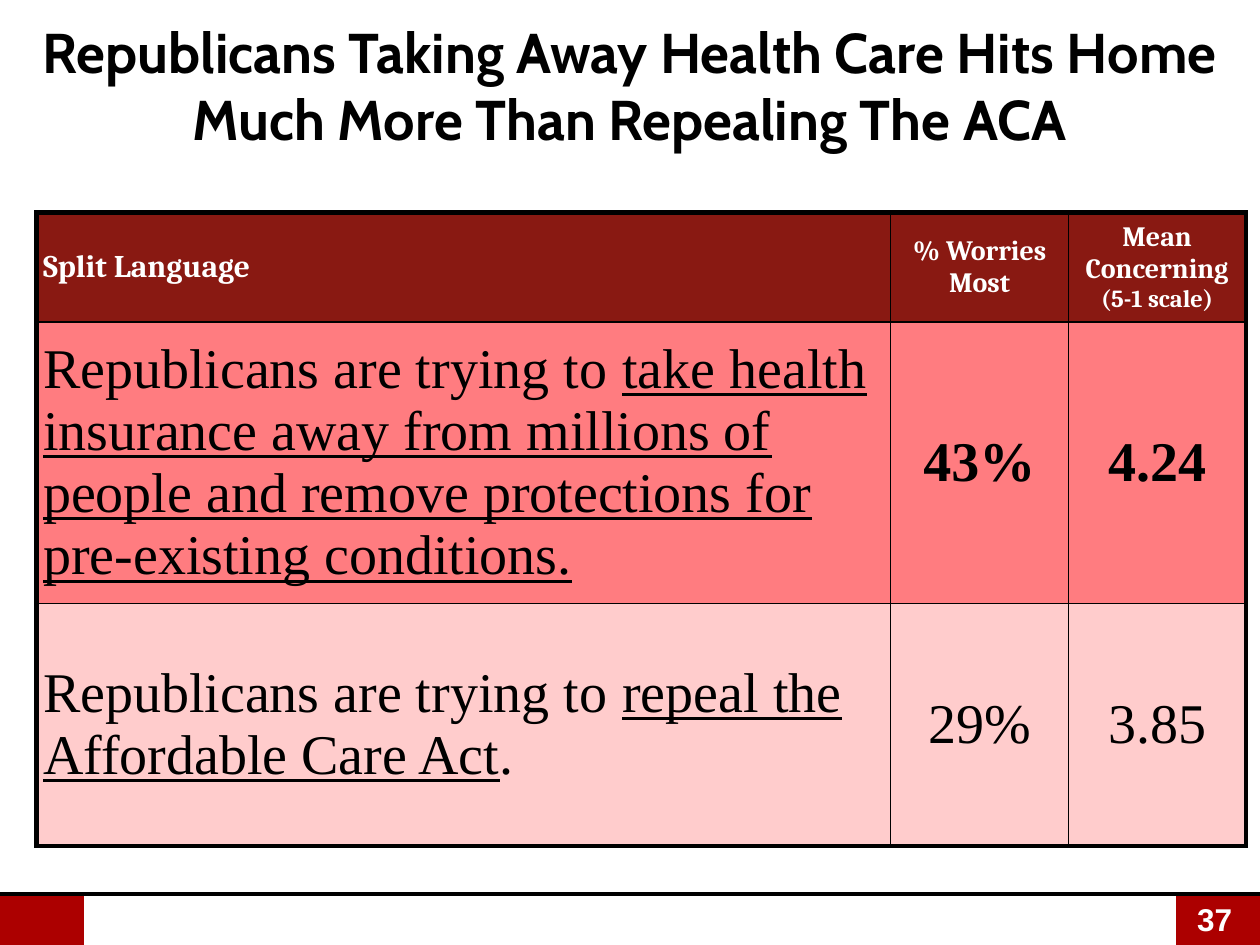
"""Build a slide comparing two ways of wording a health care message."""
from lxml import etree
from pptx import Presentation
from pptx.dml.color import RGBColor
from pptx.enum import shapes, text
from pptx.oxml import ns
from pptx.util import Pt

TITLE = "Republicans Taking Away Health Care Hits Home Much More Than Repealing The ACA"
PAGE_NUMBER = "37"
BLACK, WHITE, RED = "000000", "FFFFFF", "AC0000"
SERIF = "Times New Roman"
COLUMN_WIDTHS = [488, 101.5, 101.5]
ROW_HEIGHTS = [62, 161, 138.5]
ROW_FILLS = ["891912", "FF7C80", "FFCCCC"]
ROW_MARGINS = [3.6, 3.6, 3.6]
THICK, THIN = 3, 1

HEADINGS = [
    [("Split Language", 18)],
    [("% Worries Most", 16)],
    [("Mean Concerning", 16), ("(5-1 scale)", 14)],
]
MESSAGES = [
    {
        "wording": [
            ("Republicans are trying to ", False),
            ("take health insurance away from millions of people and remove "
             "protections for pre-existing conditions.", True),
        ],
        "scores": ["43%", "4.24"],
        "bold": True,
    },
    {
        "wording": [
            ("Republicans are trying to ", False),
            ("repeal the Affordable Care Act", True),
            (".", False),
        ],
        "scores": ["29%", "3.85"],
        "bold": False,
    },
]


def color(value):
    return RGBColor.from_string(value)


def style(paragraph, name, size, ink, bold, centered):
    paragraph.alignment = text.PP_ALIGN.CENTER if centered else text.PP_ALIGN.LEFT
    font = paragraph.font
    font.name, font.size, font.bold = name, Pt(size), bold
    font.color.rgb = color(ink)


def add_label(slide, box, wording, name, size, ink, centered):
    frame = slide.shapes.add_textbox(*map(Pt, box)).text_frame
    frame.word_wrap = True
    paragraph = frame.paragraphs[0]
    paragraph.text = wording
    style(paragraph, name, size, ink, True, centered)


def add_footer(slide):
    for left in (0, 672):
        block = slide.shapes.add_shape(
            shapes.MSO_SHAPE.RECTANGLE, Pt(left), Pt(511), Pt(48), Pt(29))
        block.shadow.inherit = False
        block.fill.solid()
        block.fill.fore_color.rgb = color(RED)
        block.line.fill.background()
    rule = slide.shapes.add_connector(
        shapes.MSO_CONNECTOR.STRAIGHT, Pt(0), Pt(511), Pt(720), Pt(511))
    rule.line.width = Pt(2)
    rule.line.color.rgb = color(BLACK)
    etree.SubElement(rule._element.spPr, ns.qn("a:effectLst"))
    add_label(slide, (677, 511, 60, 29), PAGE_NUMBER, "Arial", 18, WHITE, False)


def add_borders(cell, row, column):
    last_row, last_column = len(ROW_HEIGHTS) - 1, len(COLUMN_WIDTHS) - 1
    outer_edges = {"L": column == 0, "R": column == last_column,
                   "T": row == 0, "B": row == last_row}
    properties = cell._tc.get_or_add_tcPr()
    for edge, outer in outer_edges.items():
        width = Pt(THICK if outer else THIN)
        line = etree.SubElement(properties, ns.qn(f"a:ln{edge}"), w=str(width))
        fill = etree.SubElement(line, ns.qn("a:solidFill"))
        etree.SubElement(fill, ns.qn("a:srgbClr"), val=BLACK)


def format_cell(cell, row, column):
    add_borders(cell, row, column)
    cell.fill.solid()
    cell.fill.fore_color.rgb = color(ROW_FILLS[row])
    cell.vertical_anchor = text.MSO_ANCHOR.MIDDLE
    margin = Pt(0.7 if row == 1 and column > 0 else 3.6)
    cell.margin_left = cell.margin_right = margin
    cell.margin_top = cell.margin_bottom = margin


def fill_headings(table):
    for column, lines in enumerate(HEADINGS):
        frame = table.cell(0, column).text_frame
        for index, (wording, size) in enumerate(lines):
            paragraph = frame.add_paragraph() if index else frame.paragraphs[0]
            paragraph.text = wording
            style(paragraph, "Cambria", size, WHITE, True, column > 0)


def fill_message(table, row, message):
    paragraph = table.cell(row, 0).text_frame.paragraphs[0]
    style(paragraph, SERIF, 32, BLACK, False, False)
    for wording, underlined in message["wording"]:
        run = paragraph.add_run()
        run.text = wording
        run.font.underline = underlined
    for column, score in enumerate(message["scores"], 1):
        paragraph = table.cell(row, column).text_frame.paragraphs[0]
        paragraph.text = score
        style(paragraph, SERIF, 32, BLACK, message["bold"], True)


def add_message_table(slide):
    table = slide.shapes.add_table(
        len(ROW_HEIGHTS), len(COLUMN_WIDTHS), Pt(21), Pt(121.5),
        Pt(sum(COLUMN_WIDTHS)), Pt(sum(ROW_HEIGHTS))).table
    for column, width in zip(table.columns, COLUMN_WIDTHS):
        column.width = Pt(width)
    for row, height in zip(table.rows, ROW_HEIGHTS):
        row.height = Pt(height)
    for row in range(len(ROW_HEIGHTS)):
        for column in range(len(COLUMN_WIDTHS)):
            format_cell(table.cell(row, column), row, column)
    fill_headings(table)
    for row, message in enumerate(MESSAGES, 1):
        fill_message(table, row, message)


def main():
    presentation = Presentation()
    presentation.slide_width, presentation.slide_height = Pt(720), Pt(540)
    slide = presentation.slides.add_slide(presentation.slide_layouts[6])
    add_footer(slide)
    add_message_table(slide)
    add_label(slide, (0, 6.5, 720, 66), TITLE, "Cabin", 32, BLACK, True)
    presentation.save("out.pptx")


if __name__ == "__main__":
    main()
